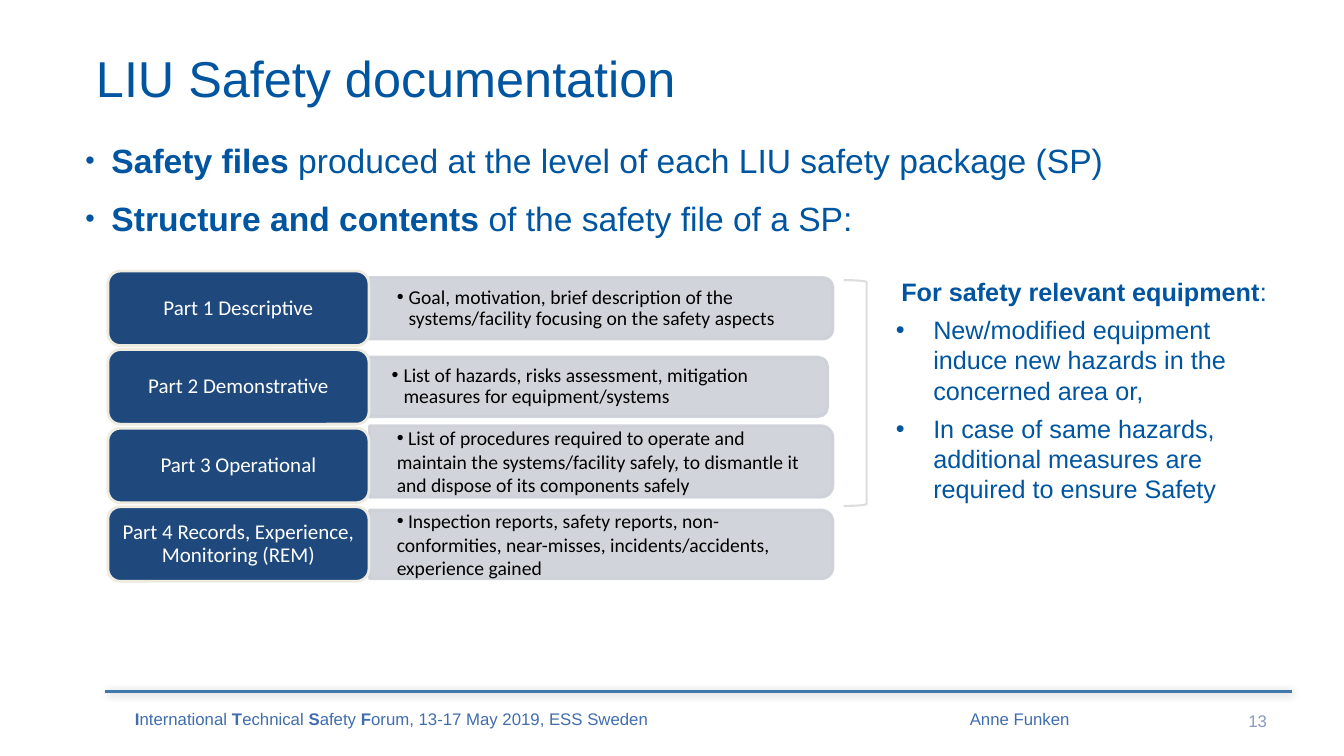
"""Build the LIU safety documentation slide."""
from lxml.etree import SubElement
from pptx import Presentation
from pptx.dml.color import RGBColor
from pptx.enum.shapes import MSO_CONNECTOR, MSO_SHAPE
from pptx.enum.text import MSO_ANCHOR, PP_ALIGN
from pptx.oxml.ns import qn
from pptx.util import Cm, Pt

BLUE = RGBColor(0x00, 0x55, 0xA0)
FOOTER_BLUE = RGBColor(0x40, 0x6D, 0xAD)
NUMBER_BLUE = RGBColor(0x8C, 0x99, 0xBE)
RULE_BLUE = RGBColor(0x41, 0x77, 0xAB)
NAVY = RGBColor(0x1F, 0x49, 0x7D)
CREAM = RGBColor(0xEE, 0xEC, 0xE1)
PANEL_GREY = RGBColor(0xCD, 0xD0, 0xD7)
BRACKET_GREY = RGBColor(0xDD, 0xDD, 0xDD)
BLACK = RGBColor(0, 0, 0)
WHITE = RGBColor(255, 255, 255)


def add_box(left, top, width, height, anchor=MSO_ANCHOR.MIDDLE):
    """Add a wrapping text box and return its text frame."""
    tf = s.shapes.add_textbox(Cm(left), Cm(top), Cm(width), Cm(height)).text_frame
    tf.word_wrap = True
    tf.vertical_anchor = anchor
    return tf


def write(p, text, size, color, font="Arial", hang=None, bullet_size=100):
    """Write text with every second |-separated piece bold; hang adds a bullet."""
    if hang is not None:
        pPr = p._p.get_or_add_pPr()
        pPr.set("marL", str(Cm(hang[0])))
        pPr.set("indent", str(Cm(-hang[1])))
        SubElement(pPr, qn("a:buSzPct")).set("val", str(bullet_size * 1000))
        SubElement(pPr, qn("a:buFont")).set("typeface", "Arial")
        SubElement(pPr, qn("a:buChar")).set("char", "•")
    for i, piece in enumerate(text.split("|")):
        if piece:
            r = p.add_run()
            r.text = piece
            r.font.name = font
            r.font.size = Pt(size)
            r.font.bold = i % 2 == 1
            r.font.color.rgb = color


prs = Presentation()
prs.slide_width, prs.slide_height = Cm(33.87), Cm(19.05)
s = prs.slides.add_slide(prs.slide_layouts[6])

rule = s.shapes.add_connector(MSO_CONNECTOR.STRAIGHT, Cm(2.65), Cm(17.42), Cm(32.55), Cm(17.42))
rule.line.color.rgb = RULE_BLUE
rule.line.width = Pt(2.25)
effects = SubElement(rule._element.spPr, qn("a:effectLst"))
shadow = SubElement(effects, qn("a:outerShdw"), blurRad=str(Pt(6)), dist=str(Pt(1)), dir="2700000")
shadow_color = SubElement(shadow, qn("a:srgbClr"), val="000000")
SubElement(shadow_color, qn("a:alpha"), val="20000")

tf = add_box(2.29, 0.81, 26.09, 2.26)
tf.margin_left = tf.margin_right = Cm(0.13)
write(tf.paragraphs[0], "LIU Safety documentation", 36, BLUE)

footers = [
    (2.29, 17.17, 15.16, 1.88, PP_ALIGN.CENTER, FOOTER_BLUE,
     "|I|nternational |T|echnical |S|afety |F|orum, 13-17 May 2019, ESS Sweden"),
    (21.56, 17.17, 8.28, 1.88, PP_ALIGN.CENTER, FOOTER_BLUE, "Anne Funken"),
    (30.33, 17.65, 1.85, 1.02, PP_ALIGN.RIGHT, NUMBER_BLUE, "13"),
]
for left, top, width, height, align, color, text in footers:
    p = add_box(left, top, width, height).paragraphs[0]
    p.alignment = align
    write(p, text, 12, color)

tf = add_box(1.7, 3.4, 30.48, 3.2, MSO_ANCHOR.TOP)
write(tf.paragraphs[0], "|Safety files |produced at the level of each LIU safety package (SP)",
      24, BLUE, hang=(0.86, 0.66), bullet_size=80)
p = tf.add_paragraph()
write(p, "|Structure and contents |of the safety file of a SP:",
      24, BLUE, hang=(0.86, 0.66), bullet_size=80)
p.space_before = Pt(12.7)

PANEL_LENGTH = 11.68
parts = [
    ("Part 1 Descriptive", 15.15, 7.77, 1.55, 0.3,
     "Goal, motivation, brief description of the systems/facility focusing on the safety aspects"),
    ("Part 2 Demonstrative", 15.02, 9.75, 1.5, 0.3,
     "List of hazards, risks assessment, mitigation measures for equipment/systems"),
    ("Part 3 Operational", 15.15, 11.63, 1.8, 0,
     " List of procedures required to operate and maintain the systems/facility safely, "
     "to dismantle it and dispose of its components safely"),
    ("Part 4 Records, Experience, Monitoring (REM)", 15.15, 13.72, 1.73, 0,
     " Inspection reports, safety reports, non-conformities, near-misses, "
     "incidents/accidents, experience gained"),
]
for i, (part, center_x, center_y, height, hang, detail) in enumerate(parts):
    panel = s.shapes.add_shape(
        MSO_SHAPE.ROUND_2_SAME_RECTANGLE, Cm(center_x - height / 2),
        Cm(center_y - PANEL_LENGTH / 2), Cm(height), Cm(PANEL_LENGTH))
    panel.rotation = 90
    panel.shadow.inherit = False
    panel.fill.solid()
    panel.fill.fore_color.rgb = PANEL_GREY
    panel.line.color.rgb = PANEL_GREY
    panel.line.width = Pt(2)
    for color in panel._element.spPr.iter(qn("a:srgbClr")):
        SubElement(color, qn("a:alpha"), val="90000")

    tf = add_box(center_x - PANEL_LENGTH / 2, center_y - height / 2, 11.61, height)
    tf.margin_left = tf.margin_right = Cm(0.69)
    tf.margin_top = tf.margin_bottom = 0
    p = tf.paragraphs[0]
    write(p, detail, 14, BLACK, "Calibri", hang=(hang, hang))
    if hang:
        p.line_spacing = 0.9

    sp = s.shapes.add_shape(MSO_SHAPE.ROUNDED_RECTANGLE, Cm(2.72), Cm(6.83 + 1.98 * i),
                            Cm(6.58), Cm(1.88))
    sp.shadow.inherit = False
    sp.fill.solid()
    sp.fill.fore_color.rgb = NAVY
    sp.line.color.rgb = CREAM
    sp.line.width = Pt(2)
    tf = sp.text_frame
    tf.word_wrap = True
    tf.vertical_anchor = MSO_ANCHOR.MIDDLE
    tf.margin_left = tf.margin_right = Cm(0.17)
    tf.margin_top = tf.margin_bottom = Cm(0.08)
    p = tf.paragraphs[0]
    p.alignment = PP_ALIGN.CENTER
    p.line_spacing = 0.9
    write(p, part, 15, WHITE, "Calibri")

tf = add_box(22.33, 6.83, 9.98, 6.83, MSO_ANCHOR.TOP)
p = tf.paragraphs[0]
p.alignment = PP_ALIGN.CENTER
write(p, "|For safety relevant equipment|:", 18, BLUE)
for text in ("New/modified equipment induce new hazards in the concerned area or,",
             "In case of same hazards, additional measures are required to ensure Safety"):
    p = tf.add_paragraph()
    write(p, text, 18, BLUE, hang=(0.94, 0.94))
    p.space_before = Pt(5.8)

bracket = s.shapes.add_shape(MSO_SHAPE.RIGHT_BRACKET, Cm(21.26), Cm(7.06), Cm(0.58), Cm(5.69))
bracket.shadow.inherit = False
bracket.fill.background()
bracket.line.color.rgb = BRACKET_GREY
bracket.line.width = Pt(1.5)

prs.save("out.pptx")
